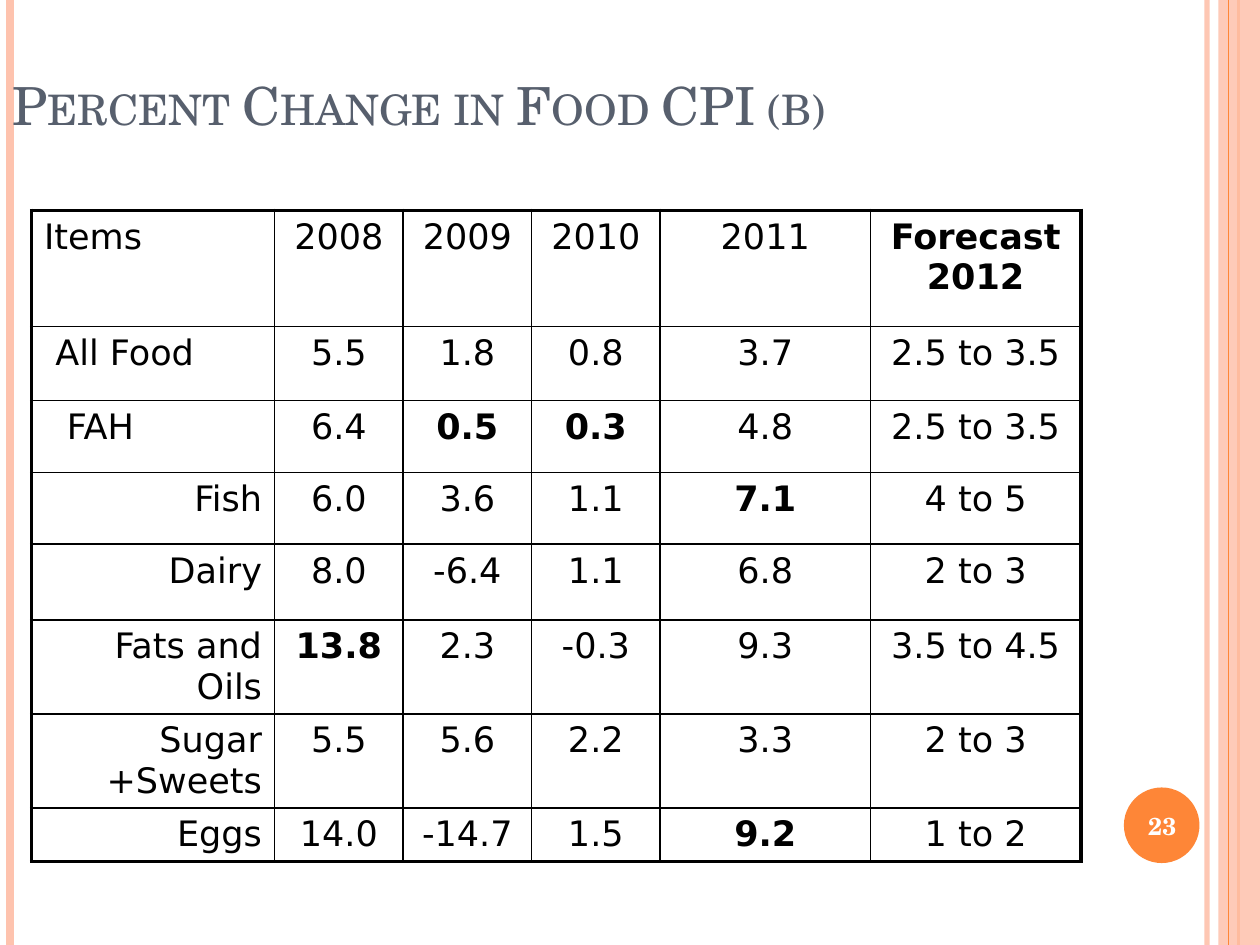
import pptx
import pptx.util
import pptx.dml.color
import pptx.enum.shapes
import pptx.enum.text
import pptx.oxml
import pptx.oxml.ns

WIDE, HIGH = 10, 7.5
COLORS = {"ink": "000000", "title": "575F6D", "peach": "FEC3AE",
          "orange": "FE8637", "white": "FFFFFF"}
SERIF, SANS = "TeX Gyre Schola", "DejaVu Sans"
THIN, THICK = 1, 2.25

COLS = [1.93, 1.02, 1.02, 1.02, 1.67, 1.67]
ROWS = [0.92, 0.59, 0.57, 0.57, 0.6, 0.57, 0.51, 0.42]
DATA = [
    ["Items", "2008", "2009", "2010", "2011", "Forecast 2012"],
    ["All Food", "5.5", "1.8", "0.8", "3.7", "2.5 to 3.5"],
    ["FAH", "6.4", "0.5", "0.3", "4.8", "2.5 to 3.5"],
    ["Fish", "6.0", "3.6", "1.1", "7.1", "4 to 5"],
    ["Dairy", "8.0", "-6.4", "1.1", "6.8", "2 to 3"],
    ["Fats and Oils", "13.8", "2.3", "-0.3", "9.3", "3.5 to 4.5"],
    ["Sugar +Sweets", "5.5", "5.6", "2.2", "3.3", "2 to 3"],
    ["Eggs", "14.0", "-14.7", "1.5", "9.2", "1 to 2"],
]
BOLD = {(0, 5), (2, 2), (2, 3), (3, 4), (5, 1), (7, 4)}
STEP = 0.09  # indent per level of the left-aligned item names

inch = pptx.util.Inches
ALIGN = pptx.enum.text.PP_ALIGN
ANCHOR = pptx.enum.text.MSO_ANCHOR


def color(name):
    return pptx.dml.color.RGBColor.from_string(COLORS[name])


def add_xml(parent, tag, body=""):
    node = pptx.oxml.parse_xml(
        f'<a:{tag} {pptx.oxml.ns.nsdecls("a")}>{body}</a:{tag}>')
    parent.append(node)
    return node


def fade(fill, share):
    """Make a solid fill partly transparent."""
    tone = fill._xPr.find(".//" + pptx.oxml.ns.qn("a:srgbClr"))
    add_xml(tone, "alpha").set("val", str(share * 1000))


def style(para, font, size, name, bold=False, align=None):
    para.alignment = align
    for run in para.runs:
        run.font.name = font
        run.font.size = pptx.util.Pt(size)
        run.font.bold = bold
        run.font.color.rgb = color(name)


def add_rule(slide, x, name, width, alpha=None):
    """Draw a vertical line over the full height of the slide."""
    rule = slide.shapes.add_connector(
        pptx.enum.shapes.MSO_CONNECTOR.STRAIGHT,
        inch(x), 0, inch(x), inch(HIGH))
    rule.line.color.rgb = color(name)
    rule.line.width = pptx.util.Pt(width)
    if alpha:
        fade(rule.line.fill, alpha)
    add_xml(rule._element.spPr, "effectLst")


def add_block(slide, kind, box, name, alpha=None):
    block = slide.shapes.add_shape(kind, *map(inch, box))
    block.shadow.inherit = False
    block.fill.solid()
    block.fill.fore_color.rgb = color(name)
    block.line.fill.background()
    if alpha:
        fade(block.fill, alpha)


def add_frame(slide):
    kinds = pptx.enum.shapes.MSO_SHAPE
    add_rule(slide, 9.58, "peach", 3, 93)
    add_rule(slide, 0.08, "peach", 4.5)
    add_rule(slide, 9.83, "orange", 1.5)
    add_block(slide, kinds.RECTANGLE, (9.67, 0, 0.33, HIGH), "peach", 87)
    add_rule(slide, 9.75, "orange", 0.75)
    add_block(slide, kinds.OVAL, (8.92, 6.25, 0.6, 0.6), "orange")


def set_title(slide, text):
    title = slide.shapes.title
    title.left, title.top, title.width, title.height = map(
        inch, (0, 0.25, 9, 0.88))
    frame = title.text_frame
    frame.text = text
    frame.vertical_anchor = ANCHOR.BOTTOM
    para = frame.paragraphs[0]
    style(para, SERIF, 30, "title", align=ALIGN.LEFT)
    para.runs[0].font._element.set("cap", "small")
    slide.shapes._spTree.append(title._element)  # in front of the frame


def set_edges(cell, row, col):
    """Thick lines around the table, thin ones inside."""
    outer = {"L": col == 0, "R": col == len(COLS) - 1,
             "T": row == 0, "B": row == len(ROWS) - 1}
    for side, thick in outer.items():
        line = add_xml(
            cell._tc.get_or_add_tcPr(), "ln" + side,
            f'<a:solidFill><a:srgbClr val="{COLORS["ink"]}"/></a:solidFill>')
        line.set("w", str(pptx.util.Pt(THICK if thick else THIN)))


def fill_cell(cell, row, col, text):
    cell.text_frame.text = text
    para = cell.text_frame.paragraphs[0]
    align = ALIGN.CENTER
    if col == 0:
        align = ALIGN.LEFT if row < 3 else ALIGN.RIGHT
        if row < 3:
            cell.margin_left = inch(0.1 + STEP * row)
    style(para, SANS, 20, "ink", (row, col) in BOLD, align)
    add_xml(para._p.get_or_add_pPr(), "spcBef", '<a:spcPct val="20000"/>')
    set_edges(cell, row, col)
    cell.fill.background()


def add_grid(slide):
    table = slide.shapes.add_table(
        len(ROWS), len(COLS), inch(0.25), inch(1.67),
        inch(sum(COLS)), inch(sum(ROWS))).table
    table.first_row = table.horz_banding = False
    for col, width in zip(table.columns, COLS):
        col.width = inch(width)
    for row, height in zip(table.rows, ROWS):
        row.height = inch(height)
    for r, line in enumerate(DATA):
        for c, text in enumerate(line):
            fill_cell(table.cell(r, c), r, c, text)


def add_number(slide, text):
    box = slide.shapes.add_textbox(*map(inch, (8.89, 6.27, 0.67, 0.57)))
    frame = box.text_frame
    frame.word_wrap = True
    frame.vertical_anchor = ANCHOR.MIDDLE
    frame.text = text
    style(frame.paragraphs[0], SERIF, 14, "white", True, ALIGN.CENTER)


def main():
    deck = pptx.Presentation()
    deck.slide_width, deck.slide_height = inch(WIDE), inch(HIGH)
    slide = deck.slides.add_slide(deck.slide_layouts.get_by_name("Title Only"))
    add_frame(slide)
    set_title(slide, "Percent Change in Food CPI (b)")
    add_grid(slide)
    add_number(slide, "23")
    deck.save("out.pptx")


if __name__ == "__main__":
    main()
